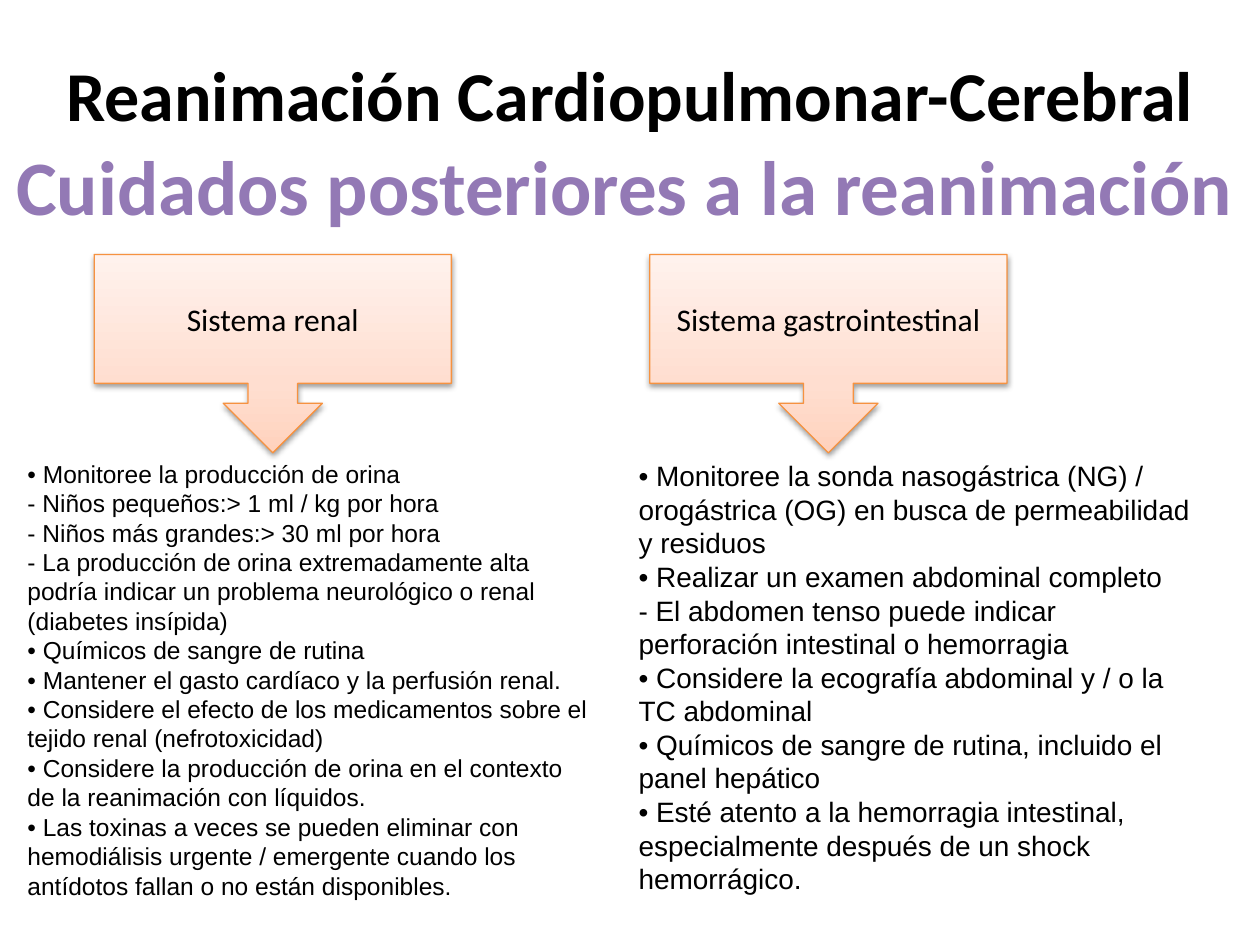
from dataclasses import dataclass

from lxml import etree
from pptx import Presentation
from pptx.dml.color import RGBColor
from pptx.enum.shapes import MSO_SHAPE
from pptx.enum.text import MSO_ANCHOR, MSO_AUTO_SIZE, PP_ALIGN
from pptx.oxml import parse_xml
from pptx.oxml.ns import nsdecls, qn
from pptx.util import Cm, Pt

CALLOUT = MSO_SHAPE.DOWN_ARROW_CALLOUT
TOP, MIDDLE = MSO_ANCHOR.TOP, MSO_ANCHOR.MIDDLE
LEFT, CENTER = PP_ALIGN.LEFT, PP_ALIGN.CENTER
NO_FIT = MSO_AUTO_SIZE.NONE


@dataclass(frozen=True)
class Theme:
    heading_font: str = "Calibri"
    body_font: str = "Arial"
    text: str = "000000"
    purple: str = "9379B5"
    outline: str = "F69240"
    purple_stops: tuple = ((0, "B099D2"), (40, "9379B5"), (50, "9379B5"), (68, "9379B5"), (100, "B099D2"))
    peach_stops: tuple = ((0, "FFD2BD"), (35, "FFDED0"), (100, "FFF2ED"))
    title_size: int = 40
    subtitle_size: int = 44
    label_size: int = 18
    renal_size: int = 14
    gastro_size: int = 16


theme = Theme()


def write(box, lines, font, size, align, anchor, bold=False, wrap=True):
    frame = box.text_frame
    frame.text = "\n".join(lines)
    frame.word_wrap = wrap
    frame.auto_size = NO_FIT
    frame.vertical_anchor = anchor
    for para in frame.paragraphs:
        properties = para._p.get_or_add_pPr()
        properties.set("marL", "0")
        properties.set("indent", "0")
        etree.SubElement(properties, qn("a:buNone"))
        para.alignment = align
        para.space_before = Pt(0)
        for span in para.runs:
            span.font.name = font
            span.font.size = Pt(size)
            span.font.bold = bold
            span.font.color.rgb = RGBColor.from_string(theme.text)


def shade(fill, properties, stops, angle):
    fill.solid()
    fill.fore_color.rgb = RGBColor.from_string(stops[0][1])
    marks = "".join(
        f'<a:gs pos="{place * 1000}"><a:srgbClr val="{color}"/></a:gs>' for place, color in stops
    )
    gradient = parse_xml(
        f'<a:gradFill {nsdecls("a")} rotWithShape="1"><a:gsLst>{marks}</a:gsLst>'
        f'<a:lin ang="{angle * 60000}" scaled="0"/></a:gradFill>'
    )
    properties.replace(properties.find(qn("a:solidFill")), gradient)


deck = Presentation()
deck.slide_width, deck.slide_height = Cm(25.4), Cm(19.05)
page = deck.slides.add_slide(deck.slide_layouts.get_by_name("Two Content"))

title = page.shapes.title
title.left, title.top, title.width, title.height = Cm(0.94), Cm(0.91), Cm(23.52), Cm(1.96)
write(title, ["Reanimación Cardiopulmonar-Cerebral"], theme.heading_font,
      theme.title_size, CENTER, TOP, bold=True, wrap=False)

subtitle = page.shapes.add_textbox(Cm(-0.03), Cm(2.67), Cm(25.27), Cm(2.13))
write(subtitle, ["Cuidados posteriores a la reanimación"], theme.heading_font,
      theme.subtitle_size, CENTER, TOP, bold=True, wrap=False)
span = subtitle.text_frame.paragraphs[0].runs[0]
shade(span.font.fill, span._r.get_or_add_rPr(), theme.purple_stops, 90)

columns = [
    ("Sistema renal", 1.9, 0.3, 11.81, theme.renal_size, [
        "• Monitoree la producción de orina",
        "- Niños pequeños:> 1 ml / kg por hora",
        "- Niños más grandes:> 30 ml por hora",
        "- La producción de orina extremadamente alta podría indicar un problema neurológico o renal (diabetes insípida)",
        "• Químicos de sangre de rutina",
        "• Mantener el gasto cardíaco y la perfusión renal.",
        "• Considere el efecto de los medicamentos sobre el tejido renal (nefrotoxicidad)",
        "• Considere la producción de orina en el contexto de la reanimación con líquidos.",
        "• Las toxinas a veces se pueden eliminar con hemodiálisis urgente / emergente cuando los antídotos fallan o no están disponibles.",
    ]),
    ("Sistema gastrointestinal", 13.1, 12.62, 11.84, theme.gastro_size, [
        "• Monitoree la sonda nasogástrica (NG) / orogástrica (OG) en busca de permeabilidad y residuos",
        "• Realizar un examen abdominal completo",
        "- El abdomen tenso puede indicar perforación intestinal o hemorragia",
        "• Considere la ecografía abdominal y / o la TC abdominal",
        "• Químicos de sangre de rutina, incluido el panel hepático",
        "• Esté atento a la hemorragia intestinal, especialmente después de un shock hemorrágico.",
    ]),
]

bodies = [box for box in page.placeholders if box.placeholder_format.idx in (1, 2)]
for body, (label, callout_left, body_left, body_width, size, lines) in zip(bodies, columns):
    callout = page.shapes.add_shape(CALLOUT, Cm(callout_left), Cm(5.13), Cm(7.2), Cm(4))
    shade(callout.fill, callout._element.spPr, theme.peach_stops, 270)
    callout.line.color.rgb = RGBColor.from_string(theme.outline)
    callout.line.width = Pt(0.75)
    callout.shadow.inherit = False
    callout._element.spPr.find(qn("a:effectLst")).append(parse_xml(
        f'<a:outerShdw {nsdecls("a")} blurRad="40000" dist="20000" dir="5400000" rotWithShape="0">'
        '<a:srgbClr val="000000"><a:alpha val="38000"/></a:srgbClr></a:outerShdw>'
    ))
    write(callout, [label], theme.heading_font, theme.label_size, CENTER, MIDDLE)

    body.left, body.top, body.width, body.height = Cm(body_left), Cm(9.12), Cm(body_width), Cm(9.2)
    write(body, lines, theme.body_font, size, LEFT, TOP)

deck.save("out.pptx")
